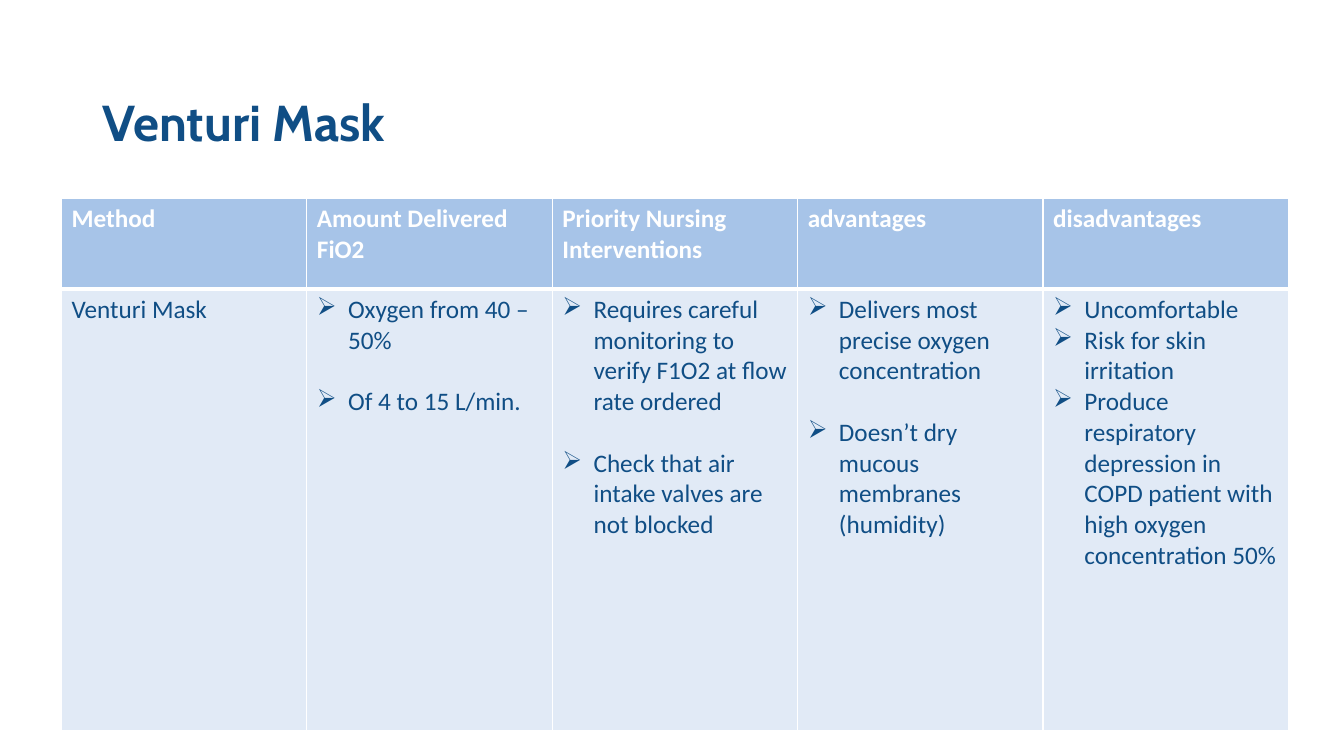
from dataclasses import dataclass

import pptx
import pptx.dml.color
import pptx.enum.text
import pptx.oxml.ns
import pptx.util
from lxml import etree
from pptx.util import Inches

TITLE = "Venturi Mask"
HEADERS = [
    ["Method"],
    ["Amount Delivered", "FiO2"],
    ["Priority Nursing Interventions"],
    ["advantages"],
    ["disadvantages"],
]
METHOD = "Venturi Mask"
# Bulleted columns: (items, space between items in points)
BULLET_COLUMNS = [
    (["Oxygen from 40 – 50%", "Of 4 to 15 L/min."], 22),
    (["Requires careful monitoring to verify F1O2 at flow rate ordered",
      "Check that air intake valves are not blocked"], 22),
    (["Delivers most precise oxygen concentration",
      "Doesn’t dry mucous membranes (humidity)"], 22),
    (["Uncomfortable", "Risk for skin irritation",
      "Produce respiratory depression in COPD patient with high oxygen "
      "concentration 50%"], 0),
]
TITLE_BOX = (0.92, 0.52, 11.5, 1.45)
TABLE_BOX = (0.61, 1.97, 12.17, 5.28)
HEADER_HEIGHT = 0.9
BULLET_INDENT = 0.31


@dataclass(frozen=True)
class Theme:
    navy: str = "104E85"
    white: str = "FFFFFF"
    header_fill: str = "A7C4E8"
    body_fill: str = "E1EAF6"
    title_font: str = "Cabin"
    table_font: str = "Calibri"
    title_size: int = 36
    table_size: int = 18
    thin: float = 1
    thick: float = 3


THEME = Theme()


def rgb(color):
    return pptx.dml.color.RGBColor.from_string(color)


def add_element(parent, tag, **attrs):
    return etree.SubElement(parent, pptx.oxml.ns.qn(tag), **attrs)


def format_runs(p, font, size, color, bold):
    for r in p.runs:
        r.font.name = font
        r.font.size = pptx.util.Pt(size)
        r.font.bold = bold
        r.font.color.rgb = rgb(color)


def add_bullet(p):
    indent = Inches(BULLET_INDENT)
    pPr = p._p.get_or_add_pPr()
    pPr.set("marL", str(indent))
    pPr.set("indent", str(-indent))
    add_element(pPr, "a:buChar", char="➢")


def set_borders(cell, top, bottom):
    tcPr = cell._tc.get_or_add_tcPr()
    widths = {"a:lnL": THEME.thin, "a:lnR": THEME.thin,
              "a:lnT": top, "a:lnB": bottom}
    for tag, width in widths.items():
        ln = add_element(tcPr, tag, w=str(pptx.util.Pt(width)))
        fill = add_element(ln, "a:solidFill")
        add_element(fill, "a:srgbClr", val=THEME.white)


def fill_cell(cell, lines, header=False, bullets=False, gap=0):
    if header:
        set_borders(cell, THEME.thin, THEME.thick)
    else:
        set_borders(cell, THEME.thick, THEME.thin)
    cell.fill.solid()
    cell.fill.fore_color.rgb = rgb(
        THEME.header_fill if header else THEME.body_fill)
    tf = cell.text_frame
    tf.text = "\n".join(lines)
    for i, p in enumerate(tf.paragraphs):
        if bullets:
            add_bullet(p)
        if i and gap:
            p.space_before = pptx.util.Pt(gap)
        format_runs(p, THEME.table_font, THEME.table_size,
                    THEME.white if header else THEME.navy, header)


def add_title(s):
    title = s.shapes.title
    title.left, title.top, title.width, title.height = map(Inches, TITLE_BOX)
    tf = title.text_frame
    tf.text = TITLE
    tf.word_wrap = True
    tf.vertical_anchor = pptx.enum.text.MSO_ANCHOR.MIDDLE
    p = tf.paragraphs[0]
    p.alignment = pptx.enum.text.PP_ALIGN.LEFT
    p.line_spacing = 0.9
    format_runs(p, THEME.title_font, THEME.title_size, THEME.navy, True)


def add_method_table(s):
    table = s.shapes.add_table(
        2, len(HEADERS), *map(Inches, TABLE_BOX)).table
    table.horz_banding = False
    for column in table.columns:
        column.width = Inches(TABLE_BOX[2] / len(HEADERS))
    table.rows[0].height = Inches(HEADER_HEIGHT)
    table.rows[1].height = Inches(TABLE_BOX[3] - HEADER_HEIGHT)

    for col, lines in enumerate(HEADERS):
        fill_cell(table.cell(0, col), lines, header=True)
    fill_cell(table.cell(1, 0), [METHOD])
    for col, (items, gap) in enumerate(BULLET_COLUMNS, start=1):
        fill_cell(table.cell(1, col), items, bullets=True, gap=gap)


def main():
    prs = pptx.Presentation()
    prs.slide_width, prs.slide_height = Inches(13.33), Inches(7.5)
    s = prs.slides.add_slide(prs.slide_layouts.get_by_name("Title Only"))
    add_title(s)
    add_method_table(s)
    prs.save("out.pptx")


if __name__ == "__main__":
    main()
